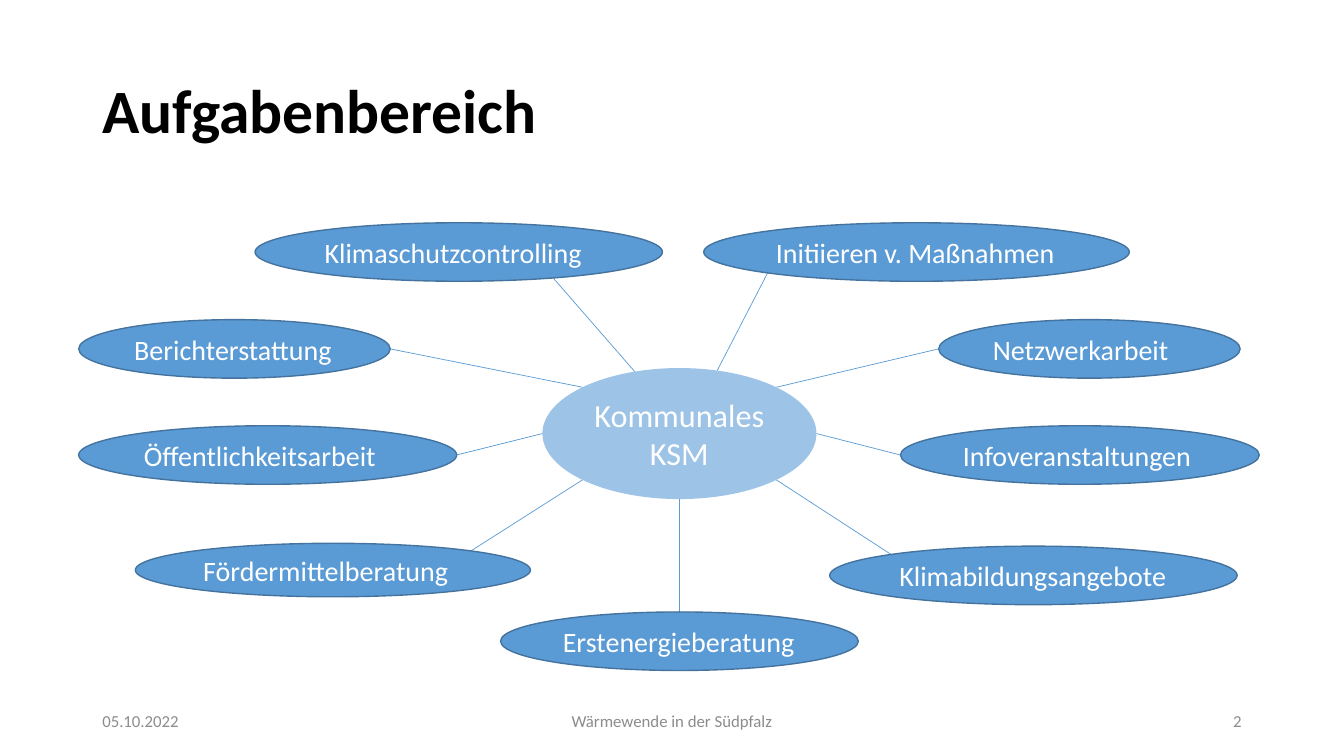
from math import cos, sin, radians
from lxml.etree import SubElement
from pptx import Presentation
from pptx.dml.color import RGBColor
from pptx.enum.shapes import MSO_CONNECTOR as Link, MSO_SHAPE as Shape
from pptx.enum.text import MSO_ANCHOR as Anchor, PP_ALIGN as Align
from pptx.oxml.ns import qn
from pptx.util import Pt

BLACK = RGBColor(0x00, 0x00, 0x00)
WHITE = RGBColor(0xFF, 0xFF, 0xFF)
GREY = RGBColor(0x8C, 0x8C, 0x8C)
BLUE = RGBColor(0x5B, 0x9B, 0xD5)
PALE = RGBColor(0x9D, 0xC3, 0xE6)
EDGE = RGBColor(0x43, 0x73, 0x9E)

HUB = (331.2, 103.8, 195.8, 93.6)
TASKS = [
    ("Klimaschutzcontrolling", (126, 0, 291, 41.8), (0.72, 0.85), 251),
    ("Initiieren v. Maßnahmen", (446.5, 0, 304, 41.8), (0.15, 0.86), 286),
    ("Berichterstattung", (0, 69.2, 222.5, 41.8), (1, 0.5), 225),
    ("Netzwerkarbeit", (614.3, 69.2, 215.3, 41.8), (0, 0.5), 315),
    ("Öffentlichkeitsarbeit", (0, 145, 270, 41.8), (1, 0.5), 180),
    ("Infoveranstaltungen", (587, 145, 256.3, 41.8), (0, 0.5), 0),
    ("Fördermittelberatung", (40.5, 229, 282.2, 38.2), (0.85, 0.14), 135),
    ("Klimabildungsangebote", (536.5, 231, 291, 41.8), (0.15, 0.14), 45),
    ("Erstenergieberatung", (301.3, 278, 255.6, 41.8), (0.5, 0), 90),
]


def put(shape, text, size, color, align=Align.LEFT, bold=False, gap=1.0):
    frame = shape.text_frame
    frame.word_wrap = True
    frame.vertical_anchor = Anchor.MIDDLE
    para = frame.paragraphs[0]
    para.alignment = align
    para.line_spacing = gap
    run = para.add_run()
    run.text = text
    font = run.font
    font.name, font.size, font.bold = "Calibri", Pt(size), bold
    font.color.rgb = color


def oval(slide, box, fill, edge=None):
    shape = slide.shapes.add_shape(Shape.OVAL, *map(Pt, box))
    shape.shadow.inherit = False
    shape.fill.solid()
    shape.fill.fore_color.rgb = fill
    if edge is None:
        shape.line.fill.background()
    else:
        shape.line.color.rgb = edge
        shape.line.width = Pt(1)
    return shape


def join(slide, start, end):
    line = slide.shapes.add_connector(Link.STRAIGHT, *map(Pt, start + end))
    line.line.color.rgb = BLUE
    line.line.width = Pt(0.5)
    SubElement(line.element.spPr, qn("a:effectLst"))


def head(slide, box):
    title = slide.shapes.title
    title.left, title.top, title.width, title.height = map(Pt, box)
    put(title, "Aufgabenbereich", 44, BLACK, bold=True, gap=0.9)


def web(slide, box):
    left, top, wide, high = box

    def shift(part):
        return (left + part[0], top + part[1]) + part[2:]

    x, y, w, h = shift(HUB)
    for _, part, (u, v), angle in TASKS:
        a, b, c, d = shift(part)
        turn = radians(angle)
        end = (x + w / 2 * (1 + cos(turn)), y + h / 2 * (1 + sin(turn)))
        join(slide, (a + u * c, b + v * d), end)
    hub = oval(slide, (x, y, w, h), PALE)
    put(hub, "Kommunales KSM", 23, WHITE, align=Align.CENTER)
    for name, part, _, _ in TASKS:
        put(oval(slide, shift(part), BLUE, EDGE), name, 20, WHITE)


def foot(slide, box):
    left, top, wide, high = box
    side, mid = 216, 324
    cells = [
        ("05.10.2022", left, side, Align.LEFT),
        ("Wärmewende in der Südpfalz", left + (wide - mid) / 2, mid, Align.CENTER),
        ("2", left + wide - side, side, Align.RIGHT),
    ]
    for text, x, w, align in cells:
        cell = slide.shapes.add_textbox(Pt(x), Pt(top), Pt(w), Pt(high))
        put(cell, text, 12, GREY, align=align)


def main():
    deck = Presentation()
    deck.slide_width, deck.slide_height = Pt(960), Pt(540)
    slide = deck.slides.add_slide(deck.slide_layouts[5])
    head(slide, (66, 28.8, 828, 104.4))
    web(slide, (56.2, 159.1, 843.3, 319.8))
    foot(slide, (66, 500.4, 828, 28.8))
    deck.save("out.pptx")


if __name__ == "__main__":
    main()
